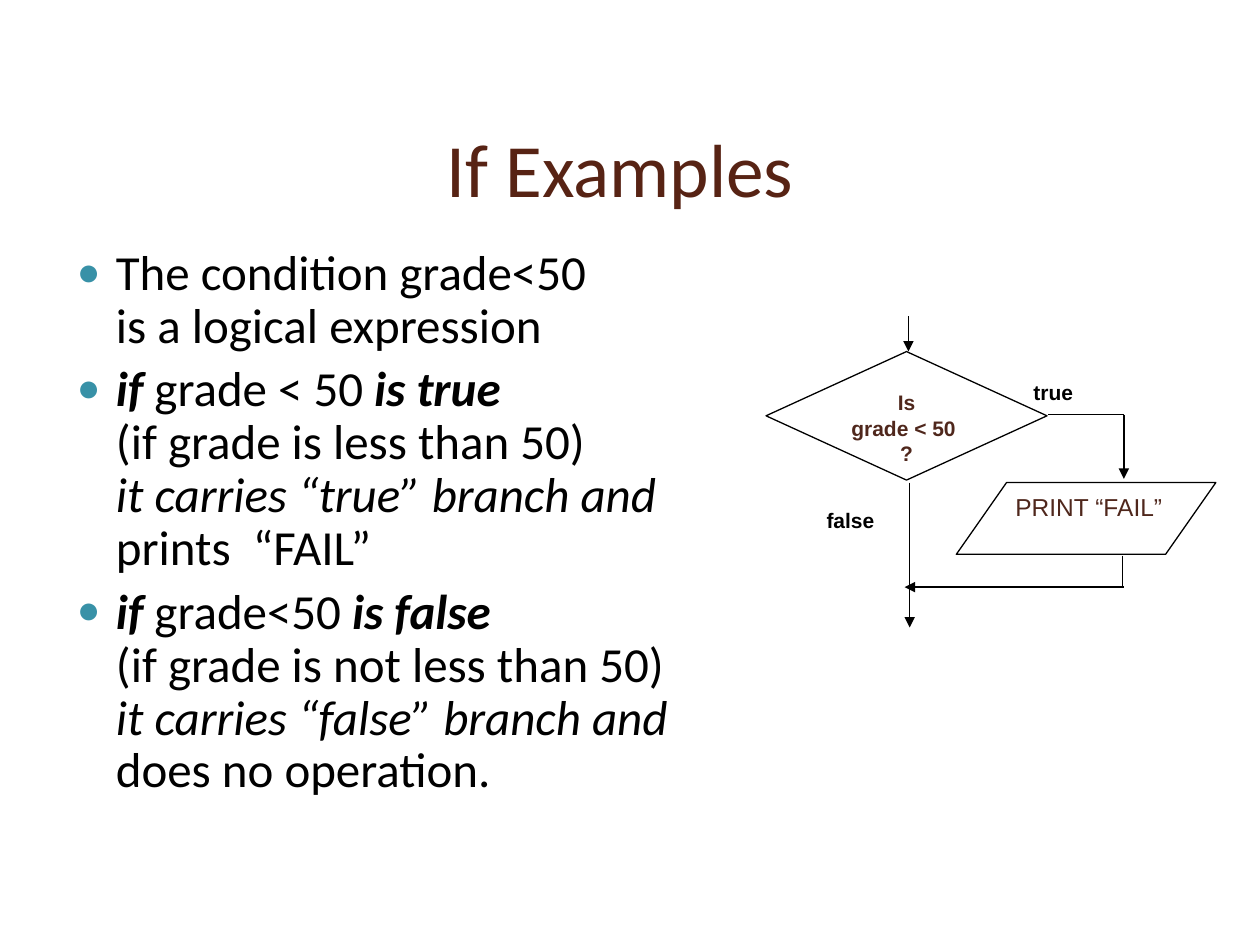
from dataclasses import dataclass

from lxml import etree
from pptx import Presentation
from pptx import util as u
from pptx.dml.color import RGBColor
from pptx.enum import shapes, text
from pptx.oxml.ns import qn

PX = 9144  # EMU in one px, 100 px to the inch


@dataclass(frozen=True)
class Theme:
    heading: str = "572314"
    body: str = "000000"
    accent: str = "3891A7"
    node: str = "4F271C"
    line: str = "000000"
    text_font: str = "Calibri"
    chart_font: str = "Arial"
    title_size: int = 43
    body_size: int = 28
    label_size: int = 12
    output_size: int = 14
    line_width: float = 0.75


T = Theme()

# Each bullet is a list of lines; each line is a list of (text, style) runs.
BULLETS = [
    [[("The condition grade<50 ", "")],
     [("is a logical expression", "")]],
    [[("if ", "bi"), ("grade < 50", ""), (" is true ", "bi")],
     [("(if grade is less than 50) ", "")],
     [("it carries “true” branch and ", "i")],
     [("prints  “FAIL”", "")]],
    [[("if ", "bi"), ("grade<50", ""), (" is false ", "bi")],
     [("(if grade is not less than 50) ", "")],
     [("it carries “false” branch and ", "i")],
     [("does no operation.", "")]],
]


def px(*values):
    return [u.Emu(v * PX) for v in values]


def place(sp, box):
    sp.left, sp.top, sp.width, sp.height = px(*box)


def add_run(p, words, font, size, color, style=""):
    r = p.add_run()
    r.text = words
    r.font.name, r.font.size = font, u.Pt(size)
    r.font.color.rgb = RGBColor.from_string(color)
    r.font.bold, r.font.italic = "b" in style, "i" in style


def add_bullet(p):
    p_pr = p._p.get_or_add_pPr()
    p_pr.set("marL", str(40 * PX))
    p_pr.set("indent", str(-31 * PX))
    color = etree.SubElement(p_pr, qn("a:buClr"))
    etree.SubElement(color, qn("a:srgbClr"), val=T.accent)
    etree.SubElement(p_pr, qn("a:buSzPct"), val="80000")
    etree.SubElement(p_pr, qn("a:buFont"), typeface=T.chart_font)
    etree.SubElement(p_pr, qn("a:buChar"), char="●")


def fill_title(sp, box, words):
    place(sp, box)
    tf = sp.text_frame
    tf.auto_size = text.MSO_AUTO_SIZE.NONE
    tf.vertical_anchor = text.MSO_ANCHOR.MIDDLE
    p = tf.paragraphs[0]
    p.alignment = text.PP_ALIGN.CENTER
    add_run(p, words, T.text_font, T.title_size, T.heading)


def fill_body(sp, box, bullets):
    place(sp, box)
    tf = sp.text_frame
    tf.auto_size = text.MSO_AUTO_SIZE.NONE
    for i, lines in enumerate(bullets):
        p = tf.add_paragraph() if i else tf.paragraphs[0]
        add_bullet(p)
        p.line_spacing = 0.9
        p.space_before = u.Pt(6 if i else 0)
        for j, line in enumerate(lines):
            if j:
                p.add_line_break()
            for words, style in line:
                add_run(p, words, T.text_font, T.body_size, T.body, style)


def add_outline(parent, kind, box):
    sp = parent.add_shape(kind, *px(*box))
    sp.shadow.inherit = False
    sp.fill.background()
    sp.line.color.rgb = RGBColor.from_string(T.line)
    sp.line.width = u.Pt(T.line_width)
    return sp


def add_line(parent, start, end, arrow=None):
    """Draw a straight line; arrow is "headEnd" (at start) or "tailEnd"."""
    cn = parent.add_connector(shapes.MSO_CONNECTOR.STRAIGHT, *px(*start, *end))
    cn.line.color.rgb = RGBColor.from_string(T.line)
    cn.line.width = u.Pt(T.line_width)
    if arrow:
        etree.SubElement(cn.line._get_or_add_ln(), qn(f"a:{arrow}"), type="triangle")
    etree.SubElement(cn._element.spPr, qn("a:effectLst"))


def write_centred(sp, lines, color):
    tf = sp.text_frame
    tf.word_wrap = True
    tf.vertical_anchor = text.MSO_ANCHOR.TOP
    for i, words in enumerate(lines):
        p = tf.add_paragraph() if i else tf.paragraphs[0]
        p.alignment = text.PP_ALIGN.CENTER
        add_run(p, words, T.chart_font, T.label_size, color, "b")


def draw_flowchart(s, left, top):
    def at(x, y, *size):
        return (left + x, top + y, *size)

    decision = s.shapes.add_group_shape().shapes
    for words, box in (("true", at(173, 45, 110, 28)),
                       ("false", at(17, 147, 100, 43))):
        write_centred(decision.add_textbox(*px(*box)), [words], T.body)
    diamond = add_outline(decision, shapes.MSO_SHAPE.FLOWCHART_DECISION,
                          at(0, 28, 223, 102))
    write_centred(diamond, ["Is", "grade < 50  ?"], T.node)
    add_line(decision, at(114, 132), at(114, 247), "tailEnd")
    add_line(decision, at(113, 0), at(113, 28), "tailEnd")

    output = add_outline(s.shapes, shapes.MSO_SHAPE.PARALLELOGRAM,
                         at(151, 132, 206, 57))
    output.adjustments[0] = 0.7
    add_line(s.shapes, at(224, 78), at(284, 78))
    add_line(s.shapes, at(284, 78), at(284, 129), "tailEnd")
    add_line(s.shapes, at(110, 215), at(284, 215), "headEnd")
    add_line(s.shapes, at(283, 190), at(283, 215))

    tf = s.shapes.add_textbox(*px(*at(188, 135, 138, 34))).text_frame
    tf.word_wrap = False
    tf.auto_size = text.MSO_AUTO_SIZE.SHAPE_TO_FIT_TEXT
    add_run(tf.paragraphs[0], "PRINT “FAIL”", T.chart_font, T.output_size, T.node)


def main():
    prs = Presentation()
    prs.slide_width, prs.slide_height = px(1000, 750)
    s = prs.slides.add_slide(prs.slide_layouts[1])
    fill_title(s.shapes.title, (42, 58, 900, 150), "If Examples")
    fill_body(s.placeholders[1], (42, 192, 592, 458), BULLETS)
    draw_flowchart(s, 608, 251)
    prs.save("out.pptx")


if __name__ == "__main__":
    main()
